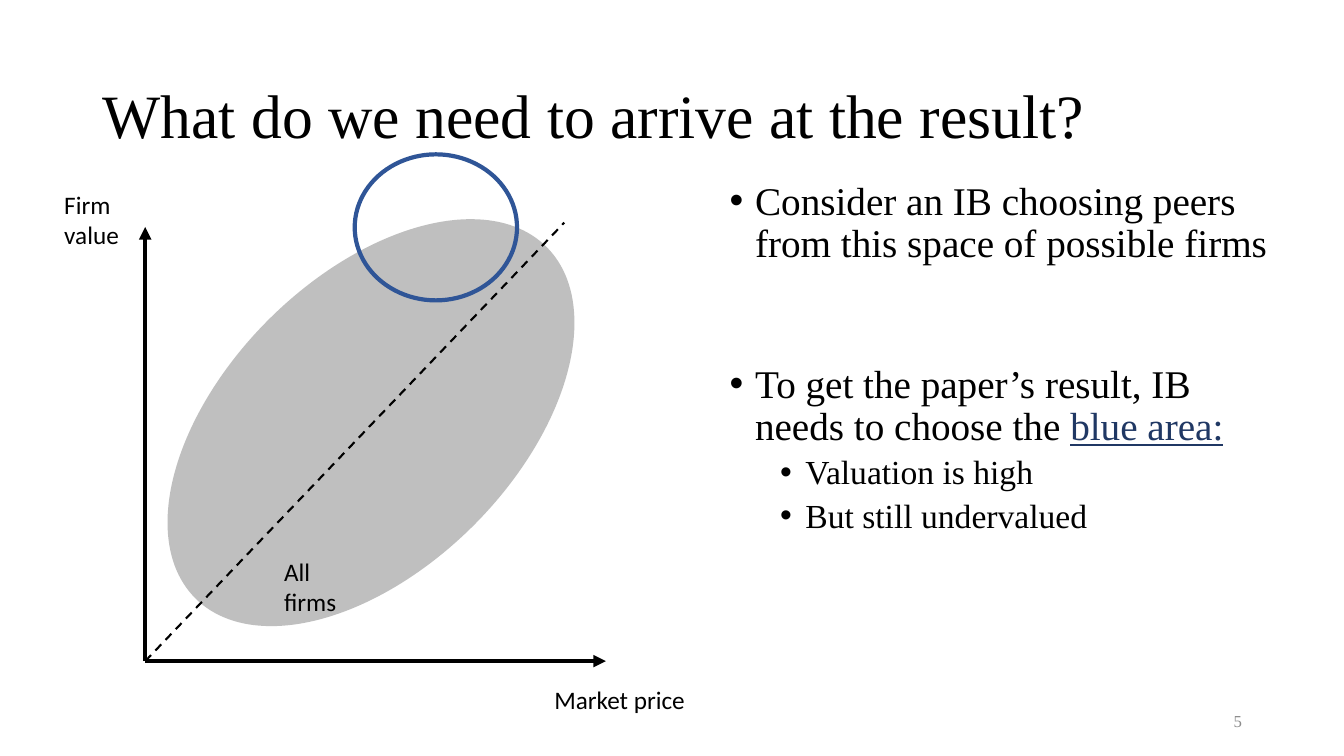
"""Build the slide on choosing peers from the space of possible firms."""
from dataclasses import dataclass

from lxml.etree import SubElement
from pptx import Presentation
from pptx.dml.color import RGBColor
from pptx.enum.dml import MSO_LINE_DASH_STYLE as Dash
from pptx.enum.shapes import MSO_CONNECTOR as Connector
from pptx.enum.shapes import MSO_SHAPE as Shape
from pptx.enum.text import MSO_ANCHOR as Anchor
from pptx.enum.text import PP_ALIGN as Align
from pptx.oxml.ns import qn
from pptx.util import Cm, Pt

COLORS = {
    "ink": "000000",
    "firms": "BFBFBF",
    "chosen": "2F5597",
    "emphasis": "203864",
    "number": "8C8C8C",
}
SERIF, SANS = "Times New Roman", "Calibri"


@dataclass(frozen=True)
class Box:
    left: float
    top: float
    width: float
    height: float

    def lengths(self) -> tuple:
        return Cm(self.left), Cm(self.top), Cm(self.width), Cm(self.height)


@dataclass(frozen=True)
class Label:
    text: str
    box: Box
    size: float = 18
    font: str = SANS
    color: str = "ink"
    align: Align = Align.LEFT
    anchor: Anchor = Anchor.TOP


@dataclass(frozen=True)
class Bullet:
    text: str
    size: float
    before: float
    indent: float
    emphasis: str = ""


@dataclass(frozen=True)
class Area:
    box: Box
    fill: str = ""
    outline: str = ""
    rotation: float = 0


@dataclass(frozen=True)
class Ray:
    end: tuple[float, float]
    weight: float
    dashed: bool = False


ORIGIN = (3.66, 16.66)
HANGING = 0.64

TITLE = Label("What do we need to arrive at the result?",
              Box(2.34, 1.02, 29.21, 3.68), 44, SERIF, anchor=Anchor.MIDDLE)
SLIDE_NUMBER = Label("5", Box(23.93, 17.65, 7.62, 1.02), 12, SERIF, "number",
                     Align.RIGHT, Anchor.MIDDLE)
DIAGRAM_LABELS = [
    Label("All firms", Box(6.91, 13.89, 2.06, 1.8)),
    Label("Market price", Box(13.72, 17.12, 4.01, 1.02)),
    Label("Firm value", Box(1.37, 4.65, 3.12, 1.8)),
]
ARGUMENT_BOX = Box(18.14, 4.45, 14.38, 12.73)
ARGUMENT = [
    Bullet("Consider an IB choosing peers from this space of possible firms", 28, 10, 0.64),
    Bullet("To get the paper’s result, IB needs to choose the ", 28, 70, 0.64, "blue area:"),
    Bullet("Valuation is high", 24, 5, 1.91),
    Bullet("But still undervalued", 24, 5, 1.91),
]
ALL_FIRMS = Area(Box(5.69, 4.39, 7.32, 12.52), fill="firms", rotation=45)
CHOSEN_PEERS = Area(Box(8.94, 3.89, 4.09, 3.68), outline="chosen")
RAYS = [
    Ray((15.27, 16.66), 3),
    Ray((3.66, 5.72), 3),
    Ray((14.22, 5.61), 1.5, dashed=True),
]


def rgb(name: str) -> RGBColor:
    return RGBColor.from_string(COLORS[name])


def add_run(paragraph, text: str, size: float, font: str, color: str):
    run = paragraph.add_run()
    run.text = text
    run.font.size = Pt(size)
    run.font.name = font
    run.font.color.rgb = rgb(color)
    return run


def add_frame(slide, box: Box, anchor: Anchor = Anchor.TOP):
    frame = slide.shapes.add_textbox(*box.lengths()).text_frame
    frame.word_wrap = True
    frame.vertical_anchor = anchor
    return frame


def add_label(slide, label: Label) -> None:
    paragraph = add_frame(slide, label.box, label.anchor).paragraphs[0]
    paragraph.alignment = label.align
    add_run(paragraph, label.text, label.size, label.font, label.color)


def add_argument(slide, box: Box, bullets: list[Bullet]) -> None:
    frame = add_frame(slide, box)
    for index, bullet in enumerate(bullets):
        paragraph = frame.add_paragraph() if index else frame.paragraphs[0]
        paragraph.line_spacing = 0.9
        paragraph.space_before = Pt(bullet.before)
        properties = paragraph._p.get_or_add_pPr()
        properties.set("marL", str(Cm(bullet.indent)))
        properties.set("indent", str(-Cm(HANGING)))
        SubElement(properties, qn("a:buFont"), typeface="Arial")
        SubElement(properties, qn("a:buChar"), char="•")
        add_run(paragraph, bullet.text, bullet.size, SERIF, "ink")
        if bullet.emphasis:
            run = add_run(paragraph, bullet.emphasis, bullet.size, SERIF, "emphasis")
            run.font.underline = True


def add_area(slide, area: Area) -> None:
    ellipse = slide.shapes.add_shape(Shape.OVAL, *area.box.lengths())
    ellipse.shadow.inherit = False
    ellipse.rotation = area.rotation
    if area.fill:
        ellipse.fill.solid()
        ellipse.fill.fore_color.rgb = rgb(area.fill)
    else:
        ellipse.fill.background()
    if area.outline:
        ellipse.line.color.rgb = rgb(area.outline)
        ellipse.line.width = Pt(3)
    else:
        ellipse.line.fill.background()


def add_ray(slide, ray: Ray) -> None:
    points = [Cm(value) for value in (*ORIGIN, *ray.end)]
    connector = slide.shapes.add_connector(Connector.STRAIGHT, *points)
    connector.line.color.rgb = rgb("ink")
    connector.line.width = Pt(ray.weight)
    if ray.dashed:
        connector.line.dash_style = Dash.DASH
    else:
        SubElement(connector.line._get_or_add_ln(), qn("a:tailEnd"), type="triangle")
    SubElement(connector._element.spPr, qn("a:effectLst"))


def main() -> None:
    deck = Presentation()
    deck.slide_width, deck.slide_height = Cm(33.87), Cm(19.05)
    slide = deck.slides.add_slide(deck.slide_layouts[6])
    add_label(slide, TITLE)
    add_argument(slide, ARGUMENT_BOX, ARGUMENT)
    add_label(slide, SLIDE_NUMBER)
    add_area(slide, ALL_FIRMS)
    for ray in RAYS:
        add_ray(slide, ray)
    for label in DIAGRAM_LABELS:
        add_label(slide, label)
    add_area(slide, CHOSEN_PEERS)
    deck.save("out.pptx")


if __name__ == "__main__":
    main()
